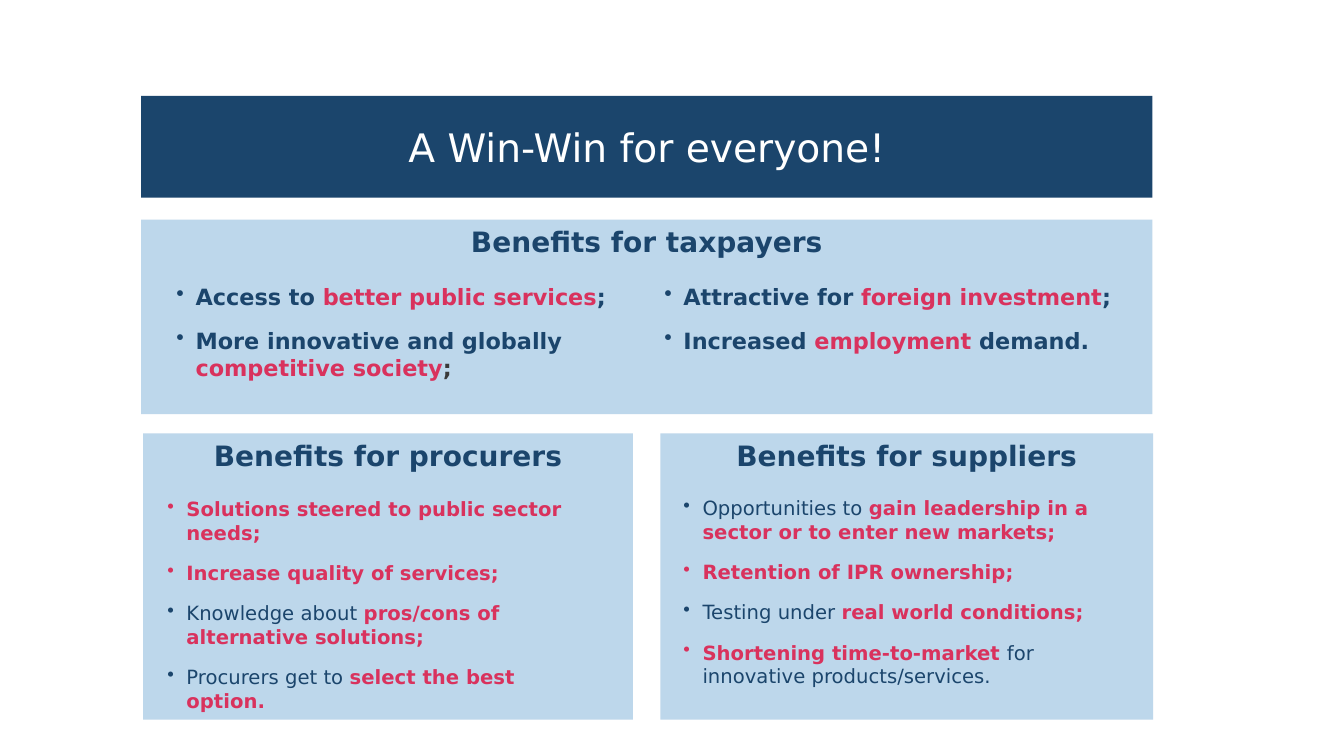
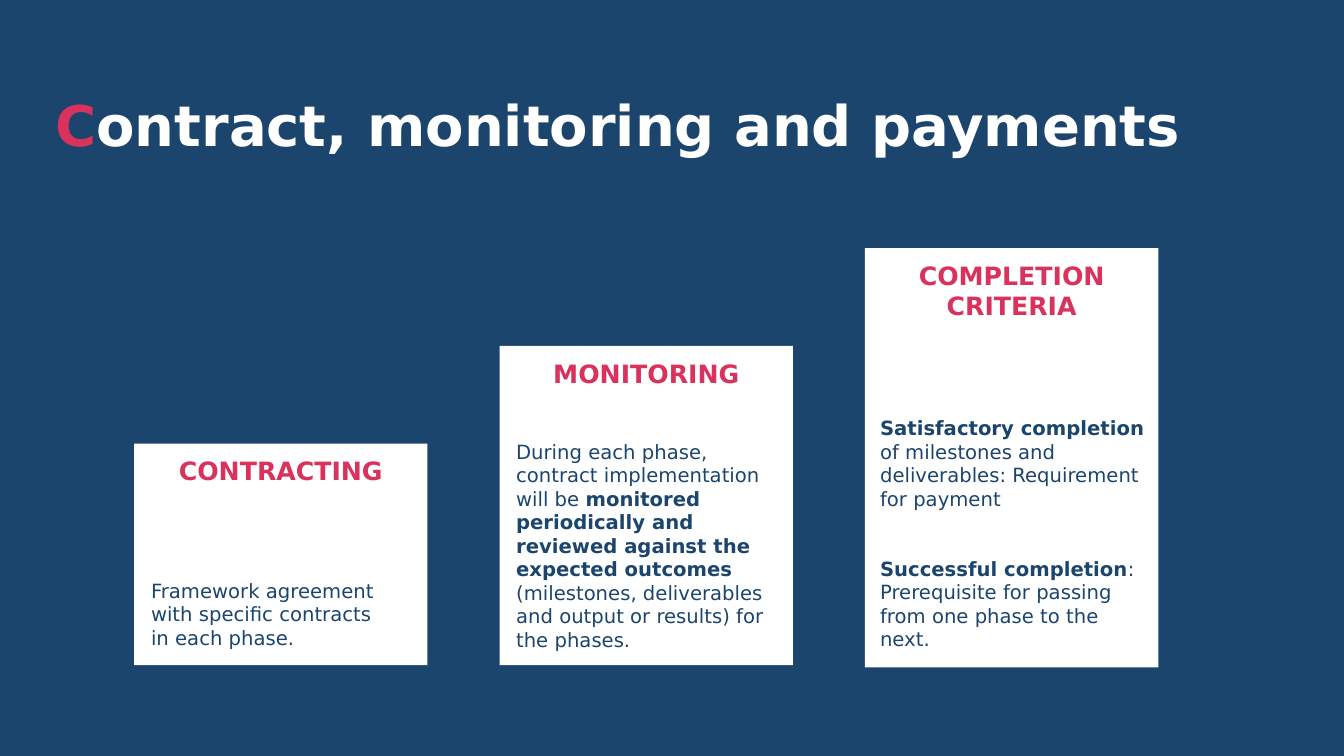
from functools import partial
from lxml import etree
from pptx import Presentation
from pptx import util as u
from pptx.dml.color import RGBColor
from pptx.enum import shapes, text
from pptx.oxml.ns import qn

NAVY = RGBColor(0x1B, 0x45, 0x6C)
CRIMSON = RGBColor(0xD9, 0x32, 0x5D)
SKY = RGBColor(0xBD, 0xD7, 0xEB)
WHITE = RGBColor(0xFF, 0xFF, 0xFF)
CHARCOAL = RGBColor(0x39, 0x39, 0x39)

FONT = "DejaVu Sans"
SLIDE_WIDTH = u.Inches(13.333)
SLIDE_HEIGHT = u.Inches(7.5)
BULLET_INDENT = u.Inches(0.19)
PANEL_INSETS = (0.1, 0.05, 0.1, 0.05)
CARD_INSETS = (0.1, 0.12, 0.1, 0.05)
TIGHT_INSETS = (0.04,) * 4
NO_INSETS = (0,) * 4


def plain(words, color=NAVY):
    return words, color, False


def bold(words, color=NAVY):
    return words, color, True


def accent(words):
    return bold(words, CRIMSON)


def place(area):
    left, top, width, height = area
    return (
        u.Emu(int(SLIDE_WIDTH * left / 100)),
        u.Emu(int(SLIDE_HEIGHT * top / 100)),
        u.Emu(int(SLIDE_WIDTH * width / 100)),
        u.Emu(int(SLIDE_HEIGHT * height / 100)),
    )


def add_bullet(paragraph, color):
    properties = paragraph._p.get_or_add_pPr()
    properties.set("marL", str(BULLET_INDENT))
    properties.set("indent", str(-BULLET_INDENT))
    bullet_color = etree.SubElement(properties, qn("a:buClr"))
    etree.SubElement(bullet_color, qn("a:srgbClr"), val=str(color))
    etree.SubElement(properties, qn("a:buChar"), char="•")


def write(frame, paragraphs, size, insets, align=text.PP_ALIGN.LEFT,
          gap=0, line_spacing=None, bullets=False):
    frame.word_wrap = True
    (frame.margin_left, frame.margin_top,
     frame.margin_right, frame.margin_bottom) = map(u.Inches, insets)
    for index, runs in enumerate(paragraphs):
        paragraph = frame.add_paragraph() if index else frame.paragraphs[0]
        paragraph.alignment = align
        if line_spacing:
            paragraph.line_spacing = line_spacing
        if index and gap:
            paragraph.space_before = u.Pt(gap)
        if bullets:
            add_bullet(paragraph, runs[0][1])
        for words, color, is_bold in runs:
            run = paragraph.add_run()
            run.text = words
            run.font.name = FONT
            run.font.size = u.Pt(size)
            run.font.bold = is_bold
            run.font.color.rgb = color


def add_panel(slide, area, fill, heading, size, insets=PANEL_INSETS,
              anchor=text.MSO_ANCHOR.TOP):
    shape = slide.shapes.add_shape(shapes.MSO_SHAPE.RECTANGLE, *place(area))
    shape.shadow.inherit = False
    shape.fill.solid()
    shape.fill.fore_color.rgb = fill
    shape.line.fill.background()
    shape.text_frame.vertical_anchor = anchor
    write(shape.text_frame, [[heading]], size, insets, text.PP_ALIGN.CENTER)


def add_text(slide, area, paragraphs, size, insets=NO_INSETS, **style):
    shape = slide.shapes.add_textbox(*place(area))
    write(shape.text_frame, paragraphs, size, insets, **style)
    shape.text_frame.auto_size = text.MSO_AUTO_SIZE.SHAPE_TO_FIT_TEXT


add_list = partial(add_text, gap=12, bullets=True)


def add_slide(presentation, background):
    slide = presentation.slides.add_slide(presentation.slide_layouts[6])
    slide.background.fill.solid()
    slide.background.fill.fore_color.rgb = background
    return slide


def build_benefits(presentation):
    slide = add_slide(presentation, WHITE)
    add_panel(slide, (10.5, 12.67, 75.25, 13.47), NAVY,
              plain("A Win-Win for everyone!", WHITE), 28,
              anchor=text.MSO_ANCHOR.MIDDLE)
    for audience, area in (
        ("taxpayers", (10.5, 29.07, 75.25, 25.73)),
        ("procurers", (10.65, 57.33, 36.45, 37.87)),
        ("suppliers", (49.13, 57.33, 36.68, 37.87)),
    ):
        add_panel(slide, area, SKY, bold(f"Benefits for {audience}"), 20)

    add_list(slide, (13.13, 37.47, 32.03, 13.07), [
        [bold("Access to "), accent("better public services"), bold(";")],
        [bold("More innovative and globally "),
         accent("competitive society"), bold(";", CHARCOAL)],
    ], 16)
    add_list(slide, (49.43, 37.47, 33.68, 15.2), [
        [bold("Attractive for "), accent("foreign investment"), bold(";")],
        [bold("Increased "), accent("employment "), bold("demand.")],
    ], 16)
    add_list(slide, (12.45, 65.73, 32.18, 25.6), [
        [accent("Solutions steered to public sector needs;")],
        [accent("Increase quality of services;")],
        [plain("Knowledge about "),
         accent("pros/cons of alternative solutions;")],
        [plain("Procurers get to "), accent("select the best option.")],
    ], 14)
    add_list(slide, (50.85, 65.6, 32.63, 25.6), [
        [plain("Opportunities to "),
         accent("gain leadership in a sector or to enter new markets;")],
        [accent("Retention of IPR ownership;")],
        [plain("Testing under "), accent("real world conditions;")],
        [accent("Shortening time-to-market "),
         plain("for innovative products/services.")],
    ], 14)


def build_contract(presentation):
    slide = add_slide(presentation, NAVY)
    add_text(slide, (4.13, 13.07, 87.38, 13.07), [
        [accent("C"), bold("ontract, monitoring and payments", WHITE)],
    ], 40, line_spacing=0.88)

    steps = (
        ("CONTRACTING", 88, (10.5, 75.87, 19.43, 10.8), PANEL_INSETS, [
            [plain("Framework agreement with specific contracts "
                   "in each phase.")],
        ]),
        ("MONITORING", 88, (38.1, 57.6, 20.55, 29.33), TIGHT_INSETS, [
            [plain("During each phase, contract implementation will be "),
             bold("monitored periodically and reviewed against "
                  "the expected outcomes "),
             plain("(milestones, deliverables and output or results) "
                   "for the phases.")],
        ]),
        ("COMPLETION CRITERIA", 88.27, (65.18, 54.53, 20.55, 32.53),
         TIGHT_INSETS, [
            [bold("Satisfactory completion "),
             plain("of milestones and deliverables: "
                   "Requirement for payment")],
            [bold("Successful completion"),
             plain(": Prerequisite for passing from one phase "
                   "to the next.")],
        ]),
    )
    for index, (heading, bottom, body_area, insets, body) in enumerate(steps):
        left = 9.98 + 27.19 * index
        top = 58.67 - 12.93 * index
        add_panel(slide, (left, top, 21.83, bottom - top), WHITE,
                  accent(heading), 18, CARD_INSETS)
        add_text(slide, body_area, body, 14, insets, gap=33)


def main():
    presentation = Presentation()
    presentation.slide_width = SLIDE_WIDTH
    presentation.slide_height = SLIDE_HEIGHT
    build_benefits(presentation)
    build_contract(presentation)
    presentation.save("out.pptx")


if __name__ == "__main__":
    main()
